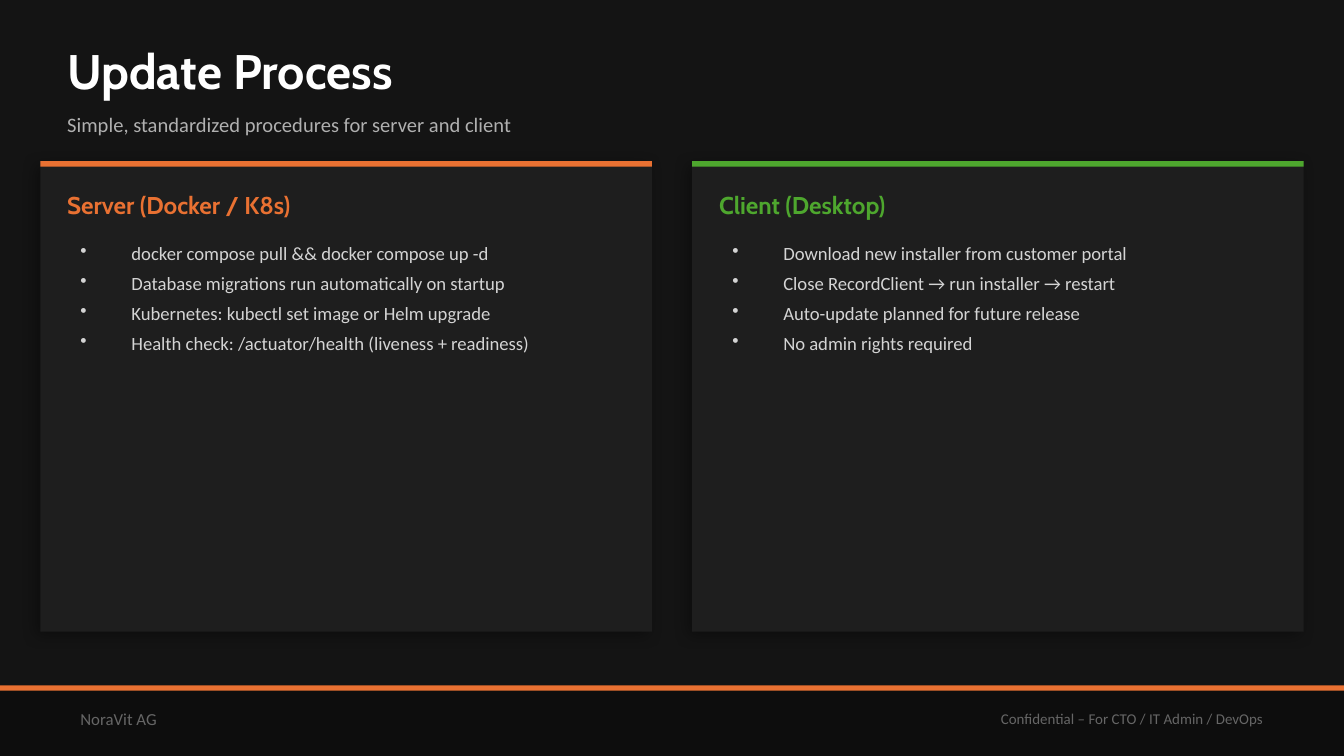
from lxml import etree
from pptx import Presentation
from pptx import util as u
from pptx.dml.color import RGBColor
from pptx.enum import shapes, text
from pptx.oxml import ns

BACKGROUND = RGBColor(0x14, 0x14, 0x14)
FOOTER = RGBColor(0x0D, 0x0D, 0x0D)
CARD = RGBColor(0x1E, 0x1E, 0x1E)
ORANGE = RGBColor(0xE9, 0x71, 0x32)
GREEN = RGBColor(0x4E, 0xA7, 0x2E)
WHITE = RGBColor(0xFF, 0xFF, 0xFF)
LIGHT = RGBColor(0xD4, 0xD4, 0xD4)
SILVER = RGBColor(0xB0, 0xB0, 0xB0)
GRAY = RGBColor(0x66, 0x66, 0x66)

HEADING = "Cabin"
BODY = "Calibri"
WIDTH = 10
HEIGHT = WIDTH * 9 / 16
BAR = 0.04
FOOTER_TOP = 5.1
MARGIN = 0.3
CARD_TOP = 1.2
CARD_WIDTH = 4.55
CARD_HEIGHT = 3.5
GAP = 0.3
PAD = 0.2

COLUMNS = [
    ("Server (Docker / K8s)", ORANGE, [
        "docker compose pull && docker compose up -d",
        "Database migrations run automatically on startup",
        "Kubernetes: kubectl set image or Helm upgrade",
        "Health check: /actuator/health (liveness + readiness)",
    ]),
    ("Client (Desktop)", GREEN, [
        "Download new installer from customer portal",
        "Close RecordClient → run installer → restart",
        "Auto-update planned for future release",
        "No admin rights required",
    ]),
]


class SlideBuilder:
    def __init__(self, prs):
        self.s = prs.slides.add_slide(prs.slide_layouts[5])
        fill = self.s.background.fill
        fill.solid()
        fill.fore_color.rgb = BACKGROUND

    def style(self, r, size, color, font=BODY, bold=False):
        r.font.size = u.Pt(size)
        r.font.name = font
        r.font.bold = bold
        r.font.color.rgb = color

    def frame(self, sp, inset=True, anchor=text.MSO_ANCHOR.MIDDLE):
        tf = sp.text_frame
        tf.word_wrap = True
        tf.auto_size = text.MSO_AUTO_SIZE.NONE
        tf.vertical_anchor = anchor
        if not inset:
            tf.margin_left = tf.margin_right = 0
            tf.margin_top = tf.margin_bottom = 0
        return tf

    def title(self, x, y, w, h, words):
        sp = self.s.shapes.title
        sp.left, sp.top, sp.width, sp.height = map(u.Inches, (x, y, w, h))
        tf = self.frame(sp, inset=False)
        tf.text = words
        p = tf.paragraphs[0]
        p.alignment = text.PP_ALIGN.LEFT
        self.style(p.runs[0], 26, WHITE, HEADING, True)

    def rect(self, x, y, w, h, color, shadow=False):
        sp = self.s.shapes.add_shape(
            shapes.MSO_SHAPE.RECTANGLE, *map(u.Inches, (x, y, w, h)))
        sp.fill.solid()
        sp.fill.fore_color.rgb = color
        sp.line.fill.background()
        sp.shadow.inherit = False
        if shadow:
            effects = sp._element.spPr.find(ns.qn("a:effectLst"))
            outer = etree.SubElement(
                effects, ns.qn("a:outerShdw"), blurRad=str(u.Pt(8)),
                dist=str(u.Pt(3)), dir=str(135 * 60000), rotWithShape="0")
            black = etree.SubElement(outer, ns.qn("a:srgbClr"), val="000000")
            etree.SubElement(black, ns.qn("a:alpha"), val="35000")

    def label(self, x, y, w, h, words, size, color, font=BODY, bold=False,
              inset=True, align=text.PP_ALIGN.LEFT):
        sp = self.s.shapes.add_textbox(*map(u.Inches, (x, y, w, h)))
        tf = self.frame(sp, inset)
        tf.text = words
        p = tf.paragraphs[0]
        p.alignment = align
        self.style(p.runs[0], size, color, font, bold)

    def bullets(self, x, y, w, h, items):
        sp = self.s.shapes.add_textbox(*map(u.Inches, (x, y, w, h)))
        tf = self.frame(sp, anchor=text.MSO_ANCHOR.TOP)
        tf.text = "\n".join(items)
        for p in tf.paragraphs:
            pPr = p._p.get_or_add_pPr()
            pPr.set("marL", str(u.Inches(0.38)))
            pPr.set("indent", str(u.Inches(-0.38)))
            etree.SubElement(pPr, ns.qn("a:buSzPct"), val="100000")
            etree.SubElement(pPr, ns.qn("a:buChar"), char="•")
            p.space_after = u.Pt(4)
            self.style(p.runs[0], 10, LIGHT)

    def card(self, x, heading, color, items):
        self.rect(x, CARD_TOP, CARD_WIDTH, CARD_HEIGHT, CARD, shadow=True)
        self.rect(x, CARD_TOP, CARD_WIDTH, BAR, color)
        left, width = x + PAD, CARD_WIDTH - 2 * PAD
        self.label(left, CARD_TOP + 0.15, width, 0.35,
                   heading, 13, color, HEADING, True, inset=False)
        self.bullets(left, CARD_TOP + 0.55, width, 2.8, items)


def main():
    prs = Presentation()
    prs.slide_width = u.Inches(WIDTH)
    prs.slide_height = u.Inches(HEIGHT)
    slide = SlideBuilder(prs)

    slide.rect(0, FOOTER_TOP, WIDTH, HEIGHT - FOOTER_TOP, FOOTER)
    slide.rect(0, FOOTER_TOP, WIDTH, BAR, ORANGE)
    slide.label(0.5, 5.15, 3, 0.4, "NoraVit AG", 9, GRAY)
    slide.label(5.5, 5.15, 4, 0.4,
                "Confidential – For CTO / IT Admin / DevOps", 8, GRAY,
                align=text.PP_ALIGN.RIGHT)

    slide.title(0.5, 0.25, 9, 0.55, "Update Process")
    slide.label(0.5, 0.75, 9, 0.35,
                "Simple, standardized procedures for server and client",
                11, SILVER, inset=False)

    for i, column in enumerate(COLUMNS):
        slide.card(MARGIN + i * (CARD_WIDTH + GAP), *column)

    prs.save("out.pptx")


if __name__ == "__main__":
    main()
